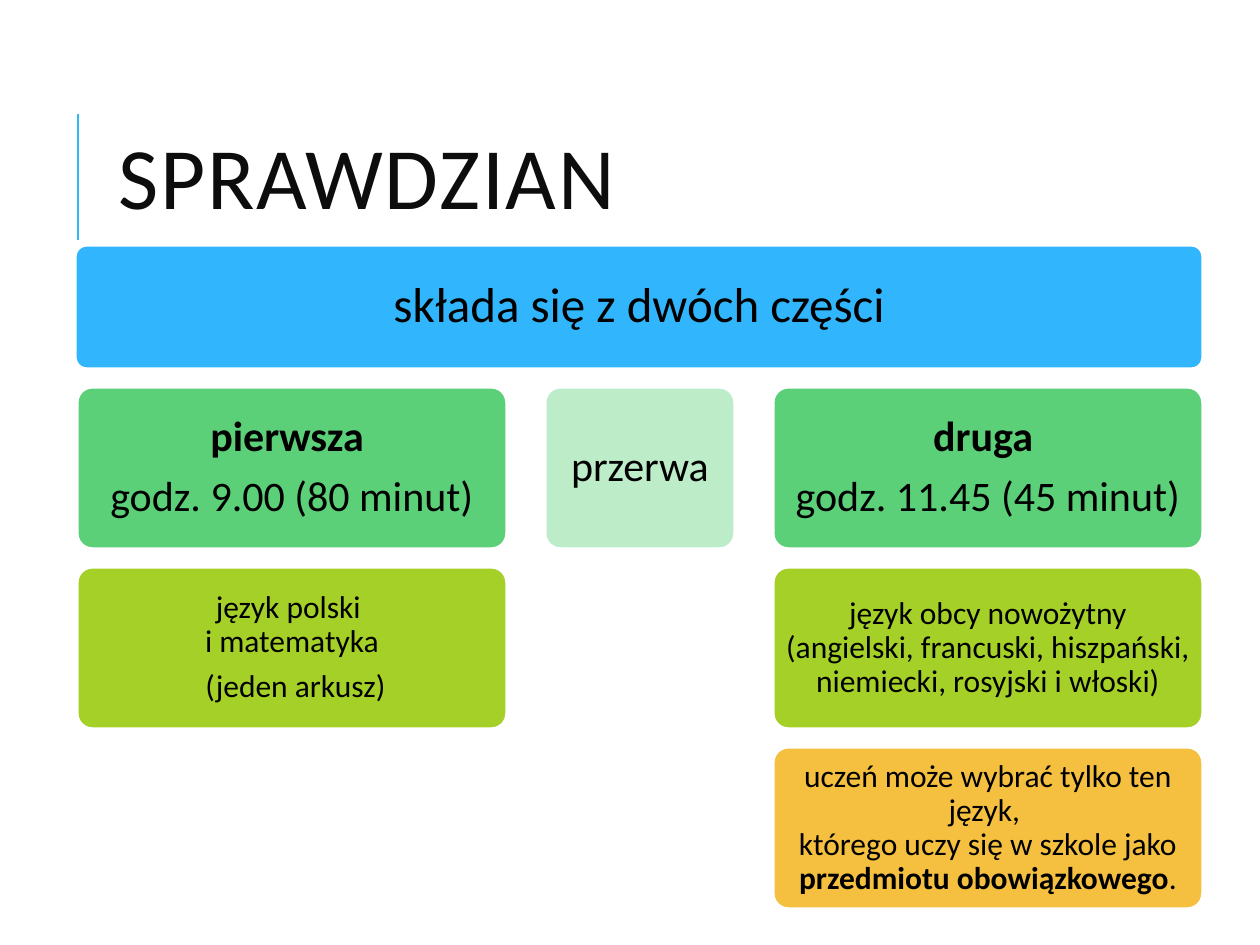
import pptx
import pptx.util
import pptx.dml.color
import pptx.enum.shapes
import pptx.enum.text
import pptx.oxml
from dataclasses import dataclass

EMU_PER_PX = 914400 // 126


@dataclass(frozen=True)
class Theme:
    """Colours and type sizes of the slide."""
    font: str = "Calibri"
    title_ink: str = "0D0D0D"
    ink: str = "000000"
    outline: str = "FFFFFF"
    blue: str = "31B6FD"
    green: str = "5BD078"
    pale_green: str = "BDECC9"
    lime: str = "A5D028"
    amber: str = "F5C040"
    title_size: int = 50
    banner_size: int = 28
    part_size: int = 24
    detail_size: int = 18


THEME = Theme()


def px(length):
    """Turn pixels into EMU."""
    return pptx.util.Emu(length * EMU_PER_PX)


def rgb(code):
    """Turn a hex code into a colour."""
    return pptx.dml.color.RGBColor.from_string(code)


def style_font(font, size, color):
    """Set typeface, size and colour."""
    font.name = THEME.font
    font.size = pptx.util.Pt(size)
    font.color.rgb = rgb(color)


def add_title(slide, text):
    """Add the title and the accent rule beside it."""
    rule = slide.shapes.add_connector(
        pptx.enum.shapes.MSO_CONNECTOR.STRAIGHT, px(78), px(240), px(78), px(114))
    rule.line.color.rgb = rgb(THEME.blue)
    rule.line.width = pptx.util.Pt(1.5)
    rule._element.spPr.append(pptx.oxml.parse_xml(
        '<a:effectLst xmlns:a="http://schemas.openxmlformats.org/drawingml/2006/main"/>'))

    title = slide.shapes.add_textbox(px(106), px(81), px(1004), px(207))
    frame = title.text_frame
    frame.word_wrap = True
    frame.vertical_anchor = pptx.enum.text.MSO_ANCHOR.MIDDLE
    paragraph = frame.paragraphs[0]
    paragraph.line_spacing = 0.8
    run = paragraph.add_run()
    run.text = text
    run._r.get_or_add_rPr().set("spc", "100")
    style_font(paragraph.font, THEME.title_size, THEME.title_ink)


def fill_paragraph(paragraph, spans, size):
    """Write (text, bold) spans into a centred paragraph."""
    paragraph.alignment = pptx.enum.text.PP_ALIGN.CENTER
    paragraph.line_spacing = 0.9
    paragraph.space_after = pptx.util.Pt(round(size * 0.35, 1))
    for text, bold in spans:
        for index, line in enumerate(text.split("\n")):
            if index:
                paragraph.add_line_break()
            run = paragraph.add_run()
            run.text = line
            if len(spans) > 1:
                run.font.bold = bold
    style_font(paragraph.font, size, THEME.ink)
    if len(spans) == 1:
        paragraph.font.bold = spans[0][1]


def add_card(slide, box, color, size, paragraphs):
    """Add a rounded card holding centred paragraphs."""
    card = slide.shapes.add_shape(
        pptx.enum.shapes.MSO_SHAPE.ROUNDED_RECTANGLE, *map(px, box))
    card.adjustments[0] = 0.1
    card.shadow.inherit = False
    card.fill.solid()
    card.fill.fore_color.rgb = rgb(color)
    card.line.color.rgb = rgb(THEME.outline)
    card.line.width = pptx.util.Pt(3)
    frame = card.text_frame
    frame.word_wrap = True
    frame.vertical_anchor = pptx.enum.text.MSO_ANCHOR.MIDDLE
    inset = px(size // 2)
    frame.margin_left = frame.margin_right = inset
    frame.margin_top = frame.margin_bottom = inset
    for index, spans in enumerate(paragraphs):
        paragraph = frame.add_paragraph() if index else frame.paragraphs[0]
        fill_paragraph(paragraph, spans, size)


def main():
    """Build the slide and save it."""
    deck = pptx.Presentation()
    deck.slide_width = pptx.util.Inches(10)
    deck.slide_height = pptx.util.Inches(7.5)
    slide = deck.slides.add_slide(deck.slide_layouts[6])

    add_title(slide, "SPRAWDZIAN")
    add_card(slide, (74, 244, 1130, 126), THEME.blue, THEME.banner_size,
             [[("składa się z dwóch części", False)]])

    part_width, break_width, column_gap = 432, 192, 36
    first_left = 76
    break_left = first_left + part_width + column_gap
    second_left = break_left + break_width + column_gap
    first, pause, second = ((first_left, part_width), (break_left, break_width),
                            (second_left, part_width))
    top, height, row_gap = 386, 164, 16

    part, detail = THEME.part_size, THEME.detail_size
    cards = [
        (first, 0, THEME.green, part,
         [[("pierwsza ", True)], [("godz. 9.00 (80 minut)", False)]]),
        (first, 1, THEME.lime, detail,
         [[("język polski \ni matematyka", False)], [(" (jeden arkusz)", False)]]),
        (pause, 0, THEME.pale_green, part, [[("przerwa", False)]]),
        (second, 0, THEME.green, part,
         [[("druga ", True)], [("godz. 11.45 (45 minut)", False)]]),
        (second, 1, THEME.lime, detail,
         [[("język obcy nowożytny (angielski, francuski, hiszpański, "
            "niemiecki, rosyjski i włoski)", False)]]),
        (second, 2, THEME.amber, detail,
         [[("uczeń może wybrać tylko ten język, \nktórego uczy się w szkole jako ", False),
           ("przedmiotu obowiązkowego", True), (".", False)]]),
    ]
    for (left, width), row, color, size, paragraphs in cards:
        box = (left, top + row * (height + row_gap), width, height)
        add_card(slide, box, color, size, paragraphs)

    deck.save("out.pptx")


if __name__ == "__main__":
    main()
